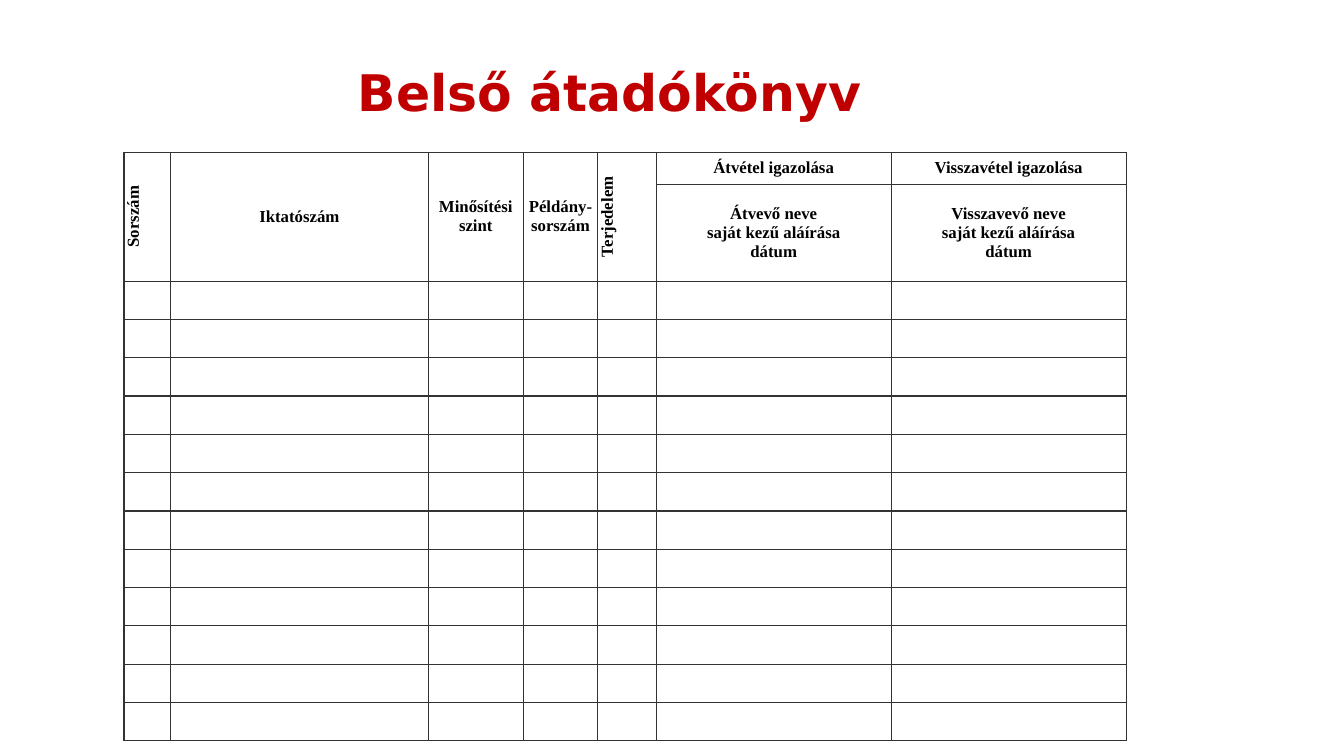
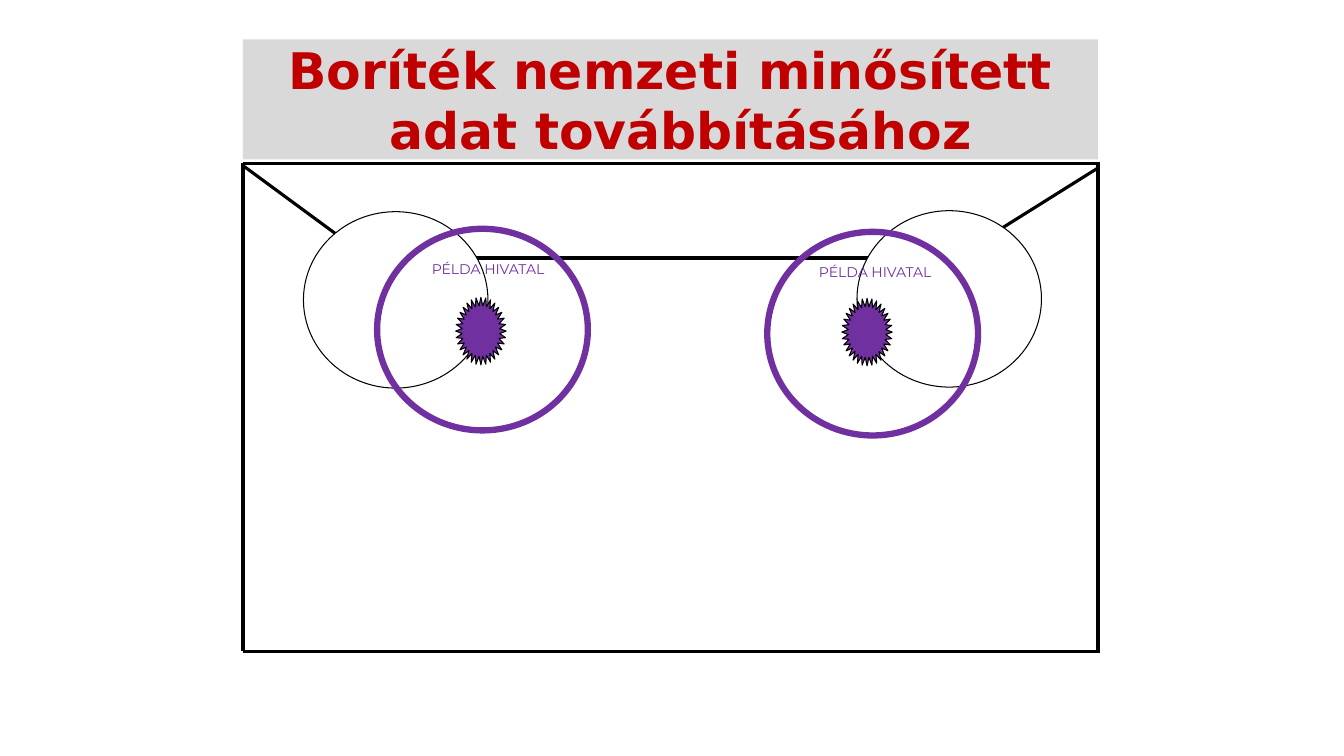
import pptx
import pptx.dml.color
import pptx.enum.shapes
import pptx.enum.text
import pptx.oxml
import pptx.oxml.ns
import pptx.util

RGBColor = pptx.dml.color.RGBColor
SHAPES = pptx.enum.shapes.MSO_SHAPE
MIDDLE = pptx.enum.text.MSO_ANCHOR.MIDDLE
TOP = pptx.enum.text.MSO_ANCHOR.TOP
CENTER = pptx.enum.text.PP_ALIGN.CENTER

RED = RGBColor(0xC0, 0x00, 0x00)
PURPLE = RGBColor(0x70, 0x30, 0xA0)
BLACK = RGBColor(0x00, 0x00, 0x00)
WHITE = RGBColor(0xFF, 0xFF, 0xFF)
GREY = RGBColor(0xD9, 0xD9, 0xD9)
BORDER = RGBColor(0x33, 0x33, 0x33)

EMU_PER_PX = 9144  # 100 px to the inch
TITLE_ONLY = 5


def px(length):
    return pptx.util.Emu(length * EMU_PER_PX)


class Slides:
    title_font = {"name": "DejaVu Sans", "size": pptx.util.Pt(36), "bold": True}
    table_font = {"name": "Times New Roman", "size": pptx.util.Pt(12), "bold": True}
    seal_font = {"name": "Montserrat", "size": pptx.util.Pt(10), "bold": False}
    cell_format = {"margin_left": px(5), "margin_right": px(5),
                   "margin_top": 0, "margin_bottom": 0}

    def __init__(self, width, height):
        self.deck = pptx.Presentation()
        self.deck.slide_width, self.deck.slide_height = px(width), px(height)
        self.page = None

    def add_page(self):
        self.page = self.deck.slides.add_slide(self.deck.slide_layouts[TITLE_ONLY])

    def set_text(self, frame, text, font, color):
        """Fill a text frame with centred paragraphs, one for each line."""
        frame.text = text
        for para in frame.paragraphs:
            para.alignment = CENTER
            for name, value in font.items():
                setattr(para.font, name, value)
            para.font.color.rgb = color

    def title(self, text, left, top, width, height, fill=None, hanging=0):
        box = self.page.shapes.title
        box.left, box.top, box.width, box.height = map(px, (left, top, width, height))
        frame = box.text_frame
        self.set_text(frame, text, self.title_font, RED)
        frame.auto_size = pptx.enum.text.MSO_AUTO_SIZE.NONE
        frame.vertical_anchor = MIDDLE
        if fill is not None:
            box.fill.solid()
            box.fill.fore_color.rgb = fill
        if hanging:
            properties = frame.paragraphs[0]._p.get_or_add_pPr()
            properties.set("marL", str(px(hanging)))
            properties.set("indent", str(-px(hanging)))

    def text(self, text, left, top, width, height):
        box = self.page.shapes.add_textbox(*map(px, (left, top, width, height)))
        box.text_frame.word_wrap = True
        self.set_text(box.text_frame, text, self.seal_font, PURPLE)

    def line(self, *ends):
        line = self.page.shapes.add_connector(
            pptx.enum.shapes.MSO_CONNECTOR.STRAIGHT, *map(px, ends))
        line.line.color.rgb = BLACK
        line.line.width = pptx.util.Pt(2.25)
        line._element.spPr.append(pptx.oxml.parse_xml(
            f"<a:effectLst {pptx.oxml.ns.nsdecls('a')}/>"))

    def shape(self, kind, left, top, width, height, fill=None, color=BLACK, weight=0.75):
        shape = self.page.shapes.add_shape(kind, *map(px, (left, top, width, height)))
        shape.shadow.inherit = False
        if fill is None:
            shape.fill.background()
        else:
            shape.fill.solid()
            shape.fill.fore_color.rgb = fill
        shape.line.color.rgb = color
        shape.line.width = pptx.util.Pt(weight)

    def border(self, cell):
        properties = cell._tc.get_or_add_tcPr()
        for position, side in enumerate(("lnL", "lnR", "lnT", "lnB")):
            properties.insert(position, pptx.oxml.parse_xml(
                f'<a:{side} {pptx.oxml.ns.nsdecls("a")} w="{pptx.util.Pt(1)}">'
                f'<a:solidFill><a:srgbClr val="{BORDER}"/></a:solidFill></a:{side}>'))

    def table(self, left, top, columns, rows):
        """Add an empty ruled table with the given column widths and row heights."""
        table = self.page.shapes.add_table(
            len(rows), len(columns),
            *map(px, (left, top, sum(columns), sum(rows)))).table
        table.first_row = table.horz_banding = False
        for column, width in zip(table.columns, columns):
            column.width = px(width)
        for row, height in zip(table.rows, rows):
            row.height = px(height)
        for cell in table.iter_cells():
            for name, value in self.cell_format.items():
                setattr(cell, name, value)
            cell.fill.solid()
            cell.fill.fore_color.rgb = WHITE
            self.border(cell)
        return table

    def heading(self, cell, text, upright=False):
        self.set_text(cell.text_frame, text, self.table_font, BLACK)
        cell.vertical_anchor = TOP if upright else MIDDLE
        if upright:
            cell._tc.get_or_add_tcPr().set("vert", "vert270")


def handover_book(slides):
    slides.add_page()
    slides.title("Belső átadókönyv", 271, 55, 667, 71)
    table = slides.table(123, 151, [46, 256, 94, 74, 58, 233, 233],
                         [32, 96] + [38] * 12)
    tall_headings = ["Sorszám", "Iktatószám", "Minősítési szint",
                     "Példány-sorszám", "Terjedelem"]
    for column, text in enumerate(tall_headings):
        cell = table.cell(0, column)
        cell.merge(table.cell(1, column))
        slides.heading(cell, text, upright=text in ("Sorszám", "Terjedelem"))
    receipts = [("Átvétel igazolása", "Átvevő neve"),
                ("Visszavétel igazolása", "Visszavevő neve")]
    for column, (receipt, person) in enumerate(receipts, len(tall_headings)):
        slides.heading(table.cell(0, column), receipt)
        slides.heading(table.cell(1, column), f"{person}\nsaját kezű aláírása\ndátum")


def envelope(slides):
    slides.add_page()
    slides.title("Boríték nemzeti minősített adat továbbításához ",
                 241, 39, 848, 119, fill=GREY, hanging=38)
    left, top, right, bottom = 241, 162, 1089, 646
    outline = [(left, top, right + 2, top), (left, bottom, right + 2, bottom),
               (left, top, left, bottom), (right, top, right, bottom)]
    flap = [(242, 165, 367, 257), (365, 256, 953, 256), (1090, 166, 948, 255)]
    for ends in outline + flap:
        slides.line(*ends)
    for corner in ((301, 210), (850, 209)):
        slides.shape(SHAPES.OVAL, *corner, 183, 175, fill=WHITE)
    seals = [((374, 227, 209, 200), (408, 254), (452, 295)),
             ((761, 230, 209, 202), (792, 257), (835, 296))]
    for ring, label, star in seals:
        slides.shape(SHAPES.OVAL, *ring, color=PURPLE, weight=4.5)
        slides.text("PÉLDA HIVATAL", *label, 152, 146)
        slides.shape(SHAPES.STAR_32_POINT, *star, 50, 67, fill=PURPLE)


def main():
    slides = Slides(1333, 750)
    handover_book(slides)
    envelope(slides)
    slides.deck.save("out.pptx")


if __name__ == "__main__":
    main()
